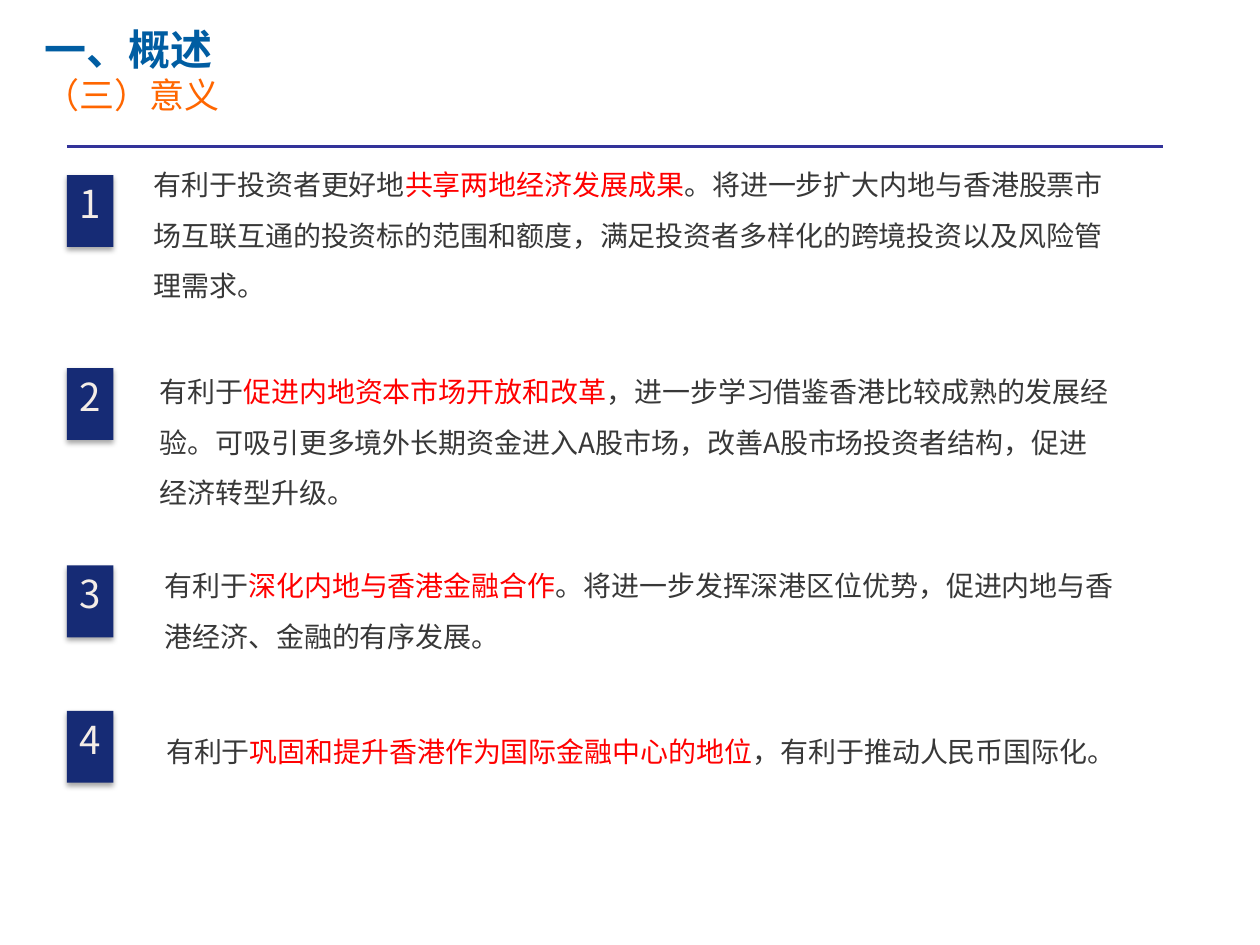
from lxml.etree import SubElement
from pptx import Presentation
from pptx.dml.color import RGBColor
from pptx.enum.shapes import MSO_CONNECTOR, MSO_SHAPE
from pptx.enum.text import MSO_ANCHOR as ANCHOR, PP_ALIGN as ALIGN
from pptx.oxml.ns import qn
from pptx.util import Cm, Pt

FONT = "Noto Sans CJK SC"
BLUE = RGBColor(0x00, 0x5D, 0xA2)
ORANGE = RGBColor(0xFF, 0x66, 0x00)
NAVY = RGBColor(0x16, 0x2B, 0x75)
CREAM = RGBColor(0xF4, 0xED, 0xE7)
GREY = RGBColor(0x38, 0x38, 0x38)
RED = RGBColor(0xFF, 0x00, 0x00)
RULE = RGBColor(0x33, 0x33, 0x99)


def add_run(paragraph, text, size, color, bold=False):
    run = paragraph.add_run()
    run.text = text
    for key, value in {"name": FONT, "size": Pt(size), "bold": bold}.items():
        setattr(run.font, key, value)
    run.font.color.rgb = color
    SubElement(run.font._element, qn("a:ea"), typeface=FONT)


def set_frame(frame, insets, anchor=ANCHOR.TOP):
    sides = ("margin_left", "margin_top", "margin_right", "margin_bottom")
    for side, inset in zip(sides, insets):
        setattr(frame, side, Cm(inset))
    frame.word_wrap = True
    frame.vertical_anchor = anchor


prs = Presentation()
prs.slide_width, prs.slide_height = Cm(25.4), Cm(19.05)
slide = prs.slides.add_slide(prs.slide_layouts[5])

# Title and subtitle
title = slide.shapes.title
title.left, title.top, title.width, title.height = Cm(0.71), Cm(0.36), Cm(9.17), Cm(2.08)
set_frame(title.text_frame, (0.18, 0.1, 0.18, 0.1), ANCHOR.MIDDLE)
heading = title.text_frame.paragraphs[0]
subheading = title.text_frame.add_paragraph()
add_run(heading, "一、概述", 24, BLUE, bold=True)
add_run(subheading, "（三）意义", 20, ORANGE)
for line in (heading, subheading):
    line.alignment = ALIGN.LEFT
    line.space_before = Pt(0)

# Rule under the title
rule = slide.shapes.add_connector(MSO_CONNECTOR.STRAIGHT, Cm(1.35), Cm(2.95), Cm(23.44), Cm(2.95))
rule.line.color.rgb = RULE
rule.line.width = Pt(2)
SubElement(rule._element.spPr, qn("a:effectLst"))

# Benefits: badge top, text box, insets, then plain, highlighted and plain wording
INSETS = (0.25, 0.13, 0.25, 0.13)
benefits = [
    (3.53, (3.1, 2.92, 19.61, 3.2), (0, 0.13, 0.25, 0),
     "有利于投资者更好地", "共享两地经济发展成果",
     "。将进一步扩大内地与香港股票市场互联互通的投资标的范围和额度，满足投资者多样化的跨境投资以及风险管理需求。"),
    (7.42, (2.97, 7.09, 19.74, 3.33), INSETS,
     "有利于", "促进内地资本市场开放和改革",
     "，进一步学习借鉴香港比较成熟的发展经验。可吸引更多境外长期资金进入A股市场，改善A股市场投资者结构，促进经济转型升级。"),
    (11.4, (3.07, 11, 19.66, 2.31), INSETS,
     "有利于", "深化内地与香港金融合作",
     "。将进一步发挥深港区位优势，促进内地与香港经济、金融的有序发展。"),
    (14.33, (3.1, 14.33, 19.66, 1.27), INSETS,
     "有利于", "巩固和提升香港作为国际金融中心的地位",
     "，有利于推动人民币国际化。"),
]
for number, (badge_top, box, insets, opening, highlight, detail) in enumerate(benefits, 1):
    # Numbered badge with a soft shadow below
    badge = slide.shapes.add_shape(MSO_SHAPE.RECTANGLE, Cm(1.35), Cm(badge_top), Cm(0.94), Cm(1.45))
    badge.fill.solid()
    badge.fill.fore_color.rgb = NAVY
    badge.line.fill.background()
    badge.shadow.inherit = False
    effects = badge._element.spPr.find(qn("a:effectLst"))
    shadow = SubElement(effects, qn("a:outerShdw"), blurRad=str(Pt(3.1)), dist=str(Pt(1.8)),
                        dir="5400000", rotWithShape="0")
    shade = SubElement(shadow, qn("a:srgbClr"), val="000000")
    SubElement(shade, qn("a:alpha"), val="35000")
    set_frame(badge.text_frame, (0.23, 0.1, 0.23, 0.1))
    badge_line = badge.text_frame.paragraphs[0]
    badge_line.alignment = ALIGN.CENTER
    add_run(badge_line, str(number), 22, CREAM)

    # Explanation
    explanation = slide.shapes.add_textbox(*(Cm(length) for length in box))
    set_frame(explanation.text_frame, insets)
    sentence = explanation.text_frame.paragraphs[0]
    sentence.line_spacing = 1.5
    for text, color in ((opening, GREY), (highlight, RED), (detail, GREY)):
        add_run(sentence, text, 16, color)

prs.save("out.pptx")
